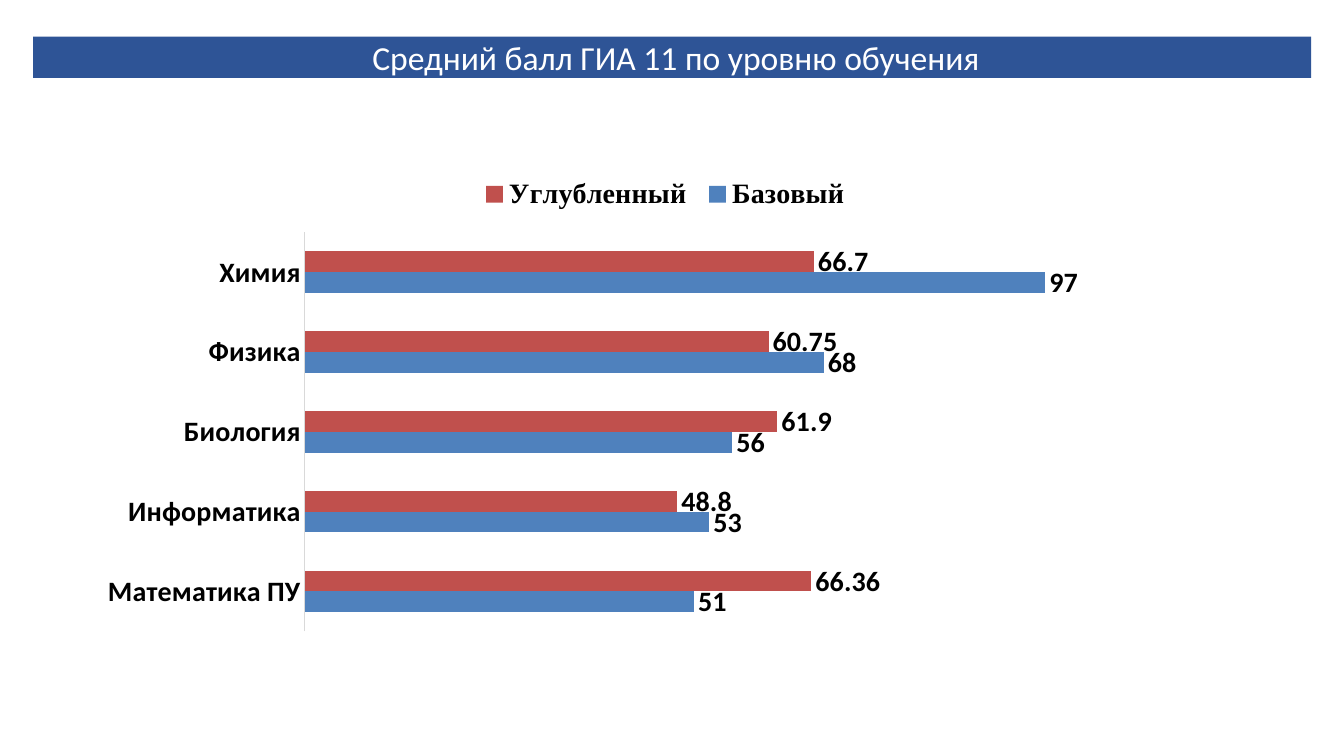
"""Build the slide with average exam scores by level of study."""
from dataclasses import dataclass

from lxml import etree
from pptx import Presentation
from pptx import util as u
from pptx.chart import data as chart_data
from pptx.chart.chart import Chart
from pptx.chart.series import BarSeries
from pptx.dml.color import RGBColor
from pptx.enum import chart as charts, shapes, text
from pptx.oxml.ns import qn
from pptx.slide import Slide
from pptx.text.text import Font


@dataclass(frozen=True)
class Theme:
    banner: RGBColor = RGBColor.from_string("2E5496")
    light: RGBColor = RGBColor.from_string("FFFFFF")
    dark: RGBColor = RGBColor.from_string("000000")
    axis: RGBColor = RGBColor.from_string("D9D9D9")
    body_font: str = "Calibri"
    legend_font: str = "Times New Roman"
    title_size: float = 24
    label_size: float = 20
    base_size: float = 10


@dataclass(frozen=True)
class Box:
    left: float
    top: float
    width: float
    height: float

    def emu(self) -> tuple[u.Pt, u.Pt, u.Pt, u.Pt]:
        return u.Pt(self.left), u.Pt(self.top), u.Pt(self.width), u.Pt(self.height)


@dataclass(frozen=True)
class Level:
    name: str
    color: str
    scores: tuple[float, ...]


THEME = Theme()
PAGE = Box(0, 0, 960, 540)
BANNER = Box(23.6, 26.2, 913, 29.5)
CHART = Box(54.7, 110.2, 844.6, 380.9)
PLOT_IN_CHART = Box(163, 55.6, 654.5, 285.3)
LEGEND_IN_CHART = Box(283, 16, 275, 25)
SUBJECTS = ("Математика ПУ", "Информатика", "Биология", "Физика", "Химия")
LEVELS = (
    Level("Базовый", "4F81BD", (51, 53, 56, 68, 97)),
    Level("Углубленный", "C0504D", (66.36, 48.8, 61.9, 60.75, 66.7)),
)


def style_font(font: Font, name: str, size: float, color: RGBColor, bold: bool = False) -> None:
    font.name = name
    font.size = u.Pt(size)
    font.bold = bold
    font.color.rgb = color


def add_banner(page: Slide, title: str) -> None:
    banner = page.shapes.add_shape(shapes.MSO_SHAPE.RECTANGLE, *BANNER.emu())
    banner.shadow.inherit = False
    banner.fill.solid()
    banner.fill.fore_color.rgb = THEME.banner
    banner.line.fill.background()
    frame = banner.text_frame
    frame.word_wrap = True
    frame.auto_size = text.MSO_AUTO_SIZE.SHAPE_TO_FIT_TEXT
    frame.vertical_anchor = text.MSO_ANCHOR.MIDDLE
    frame.margin_left = frame.margin_right = frame.margin_bottom = u.Pt(0)
    frame.margin_top = u.Pt(2.9)
    para = frame.paragraphs[0]
    para.alignment = text.PP_ALIGN.CENTER
    para.line_spacing = u.Pt(25.9)
    para.space_before = u.Pt(3.2)
    span = para.add_run()
    span.text = title
    style_font(span.font, THEME.body_font, THEME.title_size, THEME.light)


def place_part(part: etree._Element, index: int, area: Box, inner: bool = False) -> None:
    for old_layout in part.findall(qn("c:layout")):
        part.remove(old_layout)
    layout = etree.Element(qn("c:layout"))
    manual = etree.SubElement(layout, qn("c:manualLayout"))
    settings = {"layoutTarget": "inner"} if inner else {}
    settings |= {
        "xMode": "edge",
        "yMode": "edge",
        "x": area.left / CHART.width,
        "y": area.top / CHART.height,
        "w": area.width / CHART.width,
        "h": area.height / CHART.height,
    }
    for tag, value in settings.items():
        etree.SubElement(manual, qn(f"c:{tag}")).set("val", str(value))
    part.insert(index, layout)


def style_series(series: BarSeries, level: Level) -> None:
    series.format.fill.solid()
    series.format.fill.fore_color.rgb = RGBColor.from_string(level.color)
    series.invert_if_negative = False
    labels = series.data_labels
    labels.show_value = True
    labels.position = charts.XL_LABEL_POSITION.OUTSIDE_END
    style_font(labels.font, THEME.body_font, THEME.label_size, THEME.dark, True)


def style_axes(chart: Chart) -> None:
    subjects = chart.category_axis
    subjects.major_tick_mark = subjects.minor_tick_mark = charts.XL_TICK_MARK.NONE
    subjects.format.line.color.rgb = THEME.axis
    subjects.format.line.width = u.Pt(0.75)
    style_font(subjects.tick_labels.font, THEME.body_font, THEME.label_size, THEME.dark, True)
    scores = chart.value_axis
    scores.minimum_scale = 0
    scores.maximum_scale = 120
    scores.has_major_gridlines = False
    scores.visible = False


def add_score_chart(page: Slide) -> None:
    content = chart_data.CategoryChartData()
    content.categories = SUBJECTS
    for level in LEVELS:
        content.add_series(level.name, level.scores)
    chart = page.shapes.add_chart(
        charts.XL_CHART_TYPE.BAR_CLUSTERED, *CHART.emu(), content
    ).chart
    chart.has_title = False
    style_font(chart.font, THEME.body_font, THEME.base_size, THEME.dark)
    style_axes(chart)
    plot = chart.plots[0]
    plot.gap_width = 182
    plot.overlap = 0
    plot.vary_by_categories = False
    for series, level in zip(plot.series, LEVELS):
        style_series(series, level)
    chart.has_legend = True
    legend = chart.legend
    legend.position = charts.XL_LEGEND_POSITION.BOTTOM
    legend.include_in_layout = False
    style_font(legend.font, THEME.legend_font, THEME.label_size, THEME.dark, True)
    place_part(legend._element, 1, LEGEND_IN_CHART)
    plot_area = chart._chartSpace.find(f".//{qn('c:plotArea')}")
    place_part(plot_area, 0, PLOT_IN_CHART, inner=True)


def main() -> None:
    deck = Presentation()
    deck.slide_width, deck.slide_height = u.Pt(PAGE.width), u.Pt(PAGE.height)
    page = deck.slides.add_slide(deck.slide_layouts[6])
    add_score_chart(page)
    add_banner(page, " Средний балл ГИА 11 по уровню обучения")
    deck.save("out.pptx")


if __name__ == "__main__":
    main()
